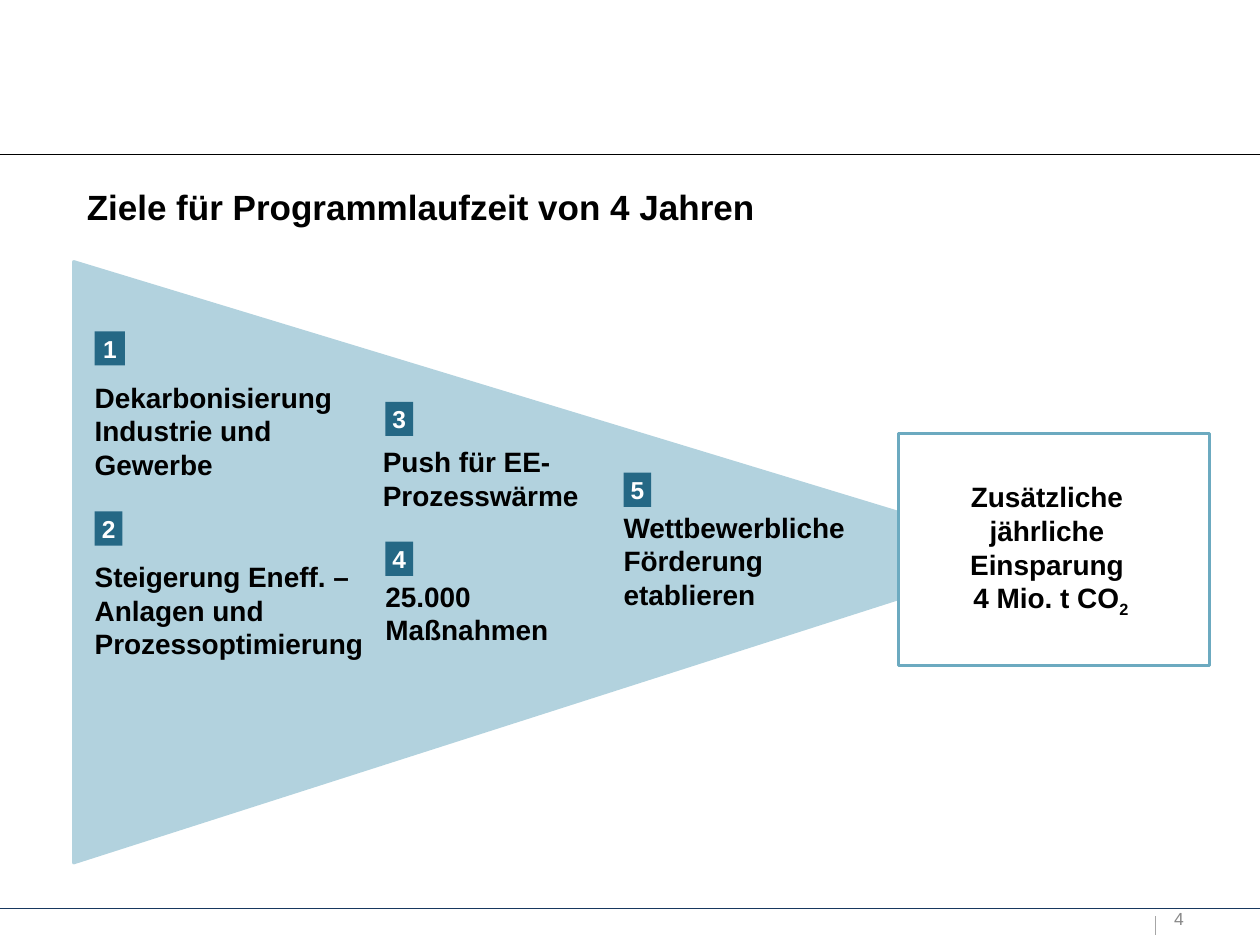
from lxml import etree
from pptx import Presentation
from pptx import util as u
from pptx.dml.color import RGBColor
from pptx.enum import shapes, text
from pptx.oxml.ns import qn


def colour(hex_value):
    return RGBColor.from_string(hex_value)


class SlideBuilder:
    FONT = "Arial"
    BLACK, WHITE, GREY = "000000", "FFFFFF", "888888"
    BADGE, FUNNEL, FRAME = "256885", "B2D2DE", "6CAAC0"
    BODY = {"name": FONT, "size": u.Pt(16), "bold": True}
    BADGE_TEXT = {**BODY, "size": u.Pt(14)}
    TITLE = {**BODY, "size": u.Pt(20)}
    PAGE = {**BODY, "size": u.Pt(10), "bold": False}
    NO_MARGIN = dict.fromkeys(("margin_left", "margin_top", "margin_right", "margin_bottom"), 0)

    def __init__(self, slide):
        self.slide = slide

    def format_run(self, run, font_format, hex_value):
        for attribute, value in font_format.items():
            setattr(run.font, attribute, value)
        run.font.color.rgb = colour(hex_value)

    def fill_frame(self, frame, words, font_format, hex_value, frame_format):
        for attribute, value in frame_format.items():
            setattr(frame, attribute, value)
        paragraph = frame.paragraphs[0]
        paragraph.text = words
        for run in paragraph.runs:
            self.format_run(run, font_format, hex_value)
        for line_break in paragraph._p.findall(qn("a:br")):
            size = str(int(font_format["size"].pt * 100))
            etree.SubElement(line_break, qn("a:rPr"), sz=size)
        return paragraph

    def label(self, box, words, font_format=BODY, hex_value=BLACK, margins=NO_MARGIN,
              **frame_format):
        frame = self.slide.shapes.add_textbox(*map(u.Cm, box)).text_frame
        return self.fill_frame(frame, words, font_format, hex_value,
                               {"word_wrap": True, **margins, **frame_format})

    def panel(self, preset, box, fill, outline=None, rotation=0):
        shape = self.slide.shapes.add_shape(preset, *map(u.Cm, box))
        shape.shadow.inherit = False
        shape.rotation = rotation
        shape.fill.solid()
        shape.fill.fore_color.rgb = colour(fill)
        if outline:
            shape.line.color.rgb = colour(outline)
            shape.line.width = u.Pt(1.75)
        else:
            shape.line.fill.background()
        return shape

    def badge(self, left, top, number, width):
        square = self.panel(shapes.MSO_SHAPE.RECTANGLE, (left, top, width, 0.69), self.BADGE)
        paragraph = self.fill_frame(
            square.text_frame, str(number), self.BADGE_TEXT, self.WHITE,
            {"word_wrap": False, "vertical_anchor": text.MSO_ANCHOR.MIDDLE, **self.NO_MARGIN})
        paragraph.alignment = text.PP_ALIGN.CENTER

    def rule(self, start, end, hex_value):
        line = self.slide.shapes.add_connector(
            shapes.MSO_CONNECTOR.STRAIGHT, *map(u.Cm, (*start, *end)))
        line.line.color.rgb = colour(hex_value)
        line.line.width = u.Pt(0.75)
        etree.SubElement(line._element.spPr, qn("a:effectLst"))


GOALS = [
    ((1.91, 6.68), 0.61, (1.91, 7.67, 5.31, 2.06), "Dekarbonisierung Industrie und Gewerbe"),
    ((1.91, 10.31), 0.56, (1.91, 11.28, 5.97, 2.06),
     "Steigerung Eneff. – Anlagen und Prozessoptimierung"),
    ((7.77, 8.1), 0.56, (7.72, 8.97, 4.11, 1.37), "Push für EE-Prozesswärme"),
    ((7.77, 10.92), 0.56, (7.77, 11.68, 4.34, 1.37), "25.000 Maßnahmen"),
    ((12.57, 9.53), 0.56, (12.57, 10.29, 4.57, 2.06), "Wettbewerbliche Förderung etablieren"),
]


def main():
    deck = Presentation()
    deck.slide_width, deck.slide_height = u.Cm(25.4), u.Cm(19.05)
    page = SlideBuilder(deck.slides.add_slide(deck.slide_layouts[6]))

    page.rule((0, 3.12), (25.4, 3.12), page.BLACK)
    page.rule((0, 18.31), (25.4, 18.31), "17375E")
    page.label((23.67, 18.31, 1.63, 0.43), "4", page.PAGE, page.GREY)
    page.rule((23.29, 18.47), (23.29, 18.85), "A6A6A6")

    funnel = page.panel(shapes.MSO_SHAPE.ISOSCELES_TRIANGLE, (5.13, 1.63, 12.12, 19.41),
                        page.FUNNEL, page.FUNNEL, rotation=90)
    funnel.adjustments[0] = 0.487

    page.panel(shapes.MSO_SHAPE.RECTANGLE, (18.11, 8.74, 6.27, 4.67), page.WHITE, page.FRAME)
    saving = page.label((18.39, 8.74, 5.59, 4.67),
                        "Zusätzliche \njährliche \nEinsparung \n4 Mio. t CO",
                        vertical_anchor=text.MSO_ANCHOR.MIDDLE)
    saving.alignment = text.PP_ALIGN.CENTER
    subscript = saving.add_run()
    subscript.text = "2"
    page.format_run(subscript, page.BODY, page.BLACK)
    subscript.font._element.set("baseline", "-25000")

    for number, (corner, width, box, goal) in enumerate(GOALS, 1):
        page.badge(*corner, number, width)
        page.label(box, goal)

    page.label((1.5, 3.61, 22.61, 1.12), "Ziele für Programmlaufzeit von 4 Jahren",
               page.TITLE, margins={})
    deck.save("out.pptx")


if __name__ == "__main__":
    main()
